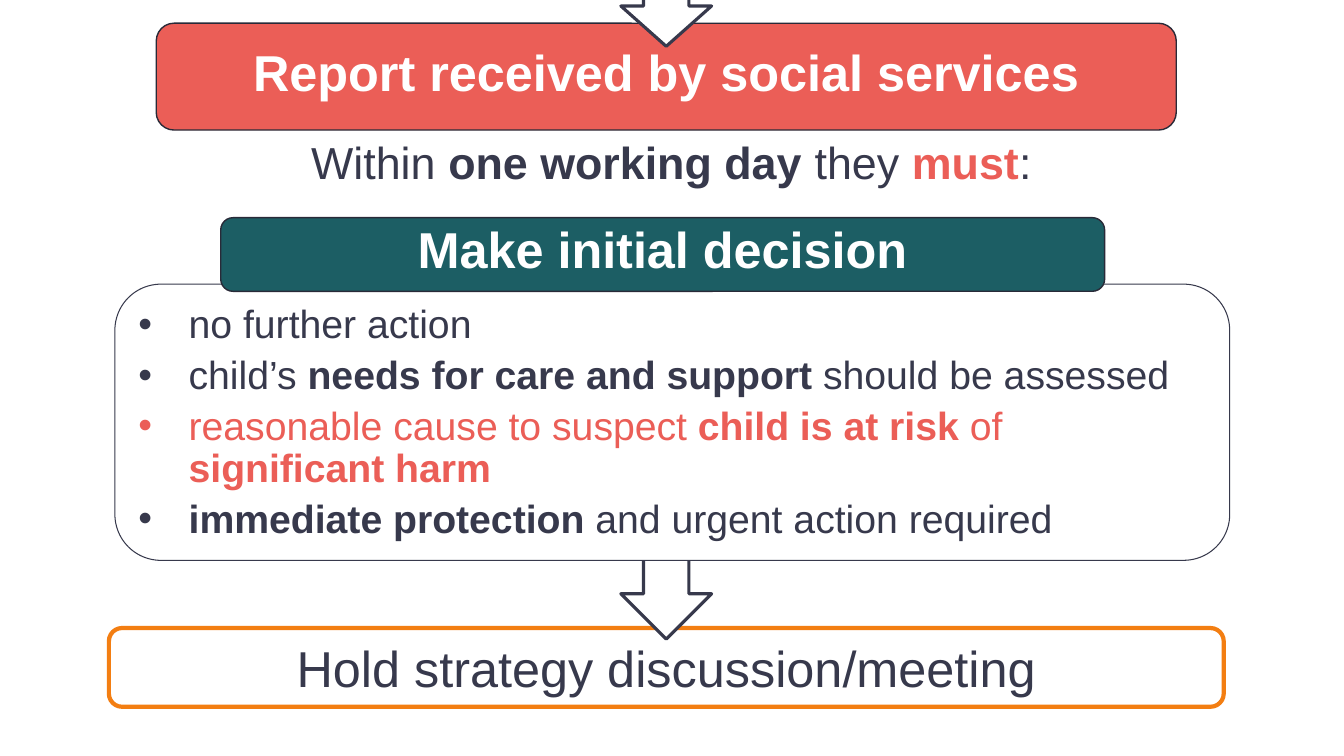
from dataclasses import dataclass
from typing import Optional

from lxml import etree
from pptx import Presentation
from pptx.dml import color
from pptx.enum import shapes, text
from pptx.oxml import ns
from pptx.util import Pt

COLORS = {
    "white": "FFFFFF",
    "ink": "37394C",
    "edge": "292A38",
    "coral": "EB5E57",
    "teal": "1C5E64",
    "orange": "F37E12",
}
FONT = "Arial"
BULLET_INDENT = 36
CENTER = text.PP_ALIGN.CENTER
TOP, MIDDLE, BOTTOM = (text.MSO_ANCHOR.TOP, text.MSO_ANCHOR.MIDDLE,
                       text.MSO_ANCHOR.BOTTOM)


@dataclass
class Run:
    text: str
    color: str = "ink"
    bold: bool = False


@dataclass
class Box:
    left: float
    top: float
    width: float
    height: float
    paragraphs: list[list[Run]]
    size: float
    fill: Optional[str] = None
    line: str = "edge"
    line_width: float = 1
    anchor: text.MSO_ANCHOR = MIDDLE
    spacing: float = 0.9
    after: float = 0
    bullets: bool = False


@dataclass
class Arrow:
    top: float
    height: float
    left: float = 443.5
    width: float = 64.8


def rgb(name: str) -> color.RGBColor:
    return color.RGBColor.from_string(COLORS[name])


def style(sp, fill: str, line: str, width: float) -> None:
    sp.shadow.inherit = False
    sp.fill.solid()
    sp.fill.fore_color.rgb = rgb(fill)
    sp.line.color.rgb = rgb(line)
    sp.line.width = Pt(width)


def add_bullet(p) -> None:
    pPr = p._p.get_or_add_pPr()
    pPr.set("marL", str(Pt(BULLET_INDENT)))
    pPr.set("indent", str(Pt(-BULLET_INDENT)))
    etree.SubElement(pPr, ns.qn("a:buFont"), typeface=FONT)
    etree.SubElement(pPr, ns.qn("a:buChar"), char="•")


def add_run(p, content: str, *, size: float, color: str, bold: bool) -> None:
    r = p.add_run()
    r.text = content
    r.font.name = FONT
    r.font.size = Pt(size)
    r.font.bold = bold
    r.font.color.rgb = rgb(color)


def draw_box(slide, box: Box) -> None:
    frame = [Pt(v) for v in (box.left, box.top, box.width, box.height)]
    if box.fill:
        sp = slide.shapes.add_shape(shapes.MSO_SHAPE.ROUNDED_RECTANGLE, *frame)
        style(sp, box.fill, box.line, box.line_width)
    else:
        sp = slide.shapes.add_textbox(*frame)
    tf = sp.text_frame
    tf.word_wrap = True
    tf.vertical_anchor = box.anchor
    for i, runs in enumerate(box.paragraphs):
        p = tf.add_paragraph() if i else tf.paragraphs[0]
        p.alignment = text.PP_ALIGN.LEFT if box.bullets else CENTER
        p.line_spacing = box.spacing
        last = i == len(box.paragraphs) - 1
        p.space_after = Pt(0 if last else box.after)
        if box.bullets:
            add_bullet(p)
        for run in runs:
            add_run(p, run.text, size=box.size, color=run.color, bold=run.bold)


def draw_arrow(slide, arrow: Arrow) -> None:
    sp = slide.shapes.add_shape(
        shapes.MSO_SHAPE.DOWN_ARROW, Pt(arrow.left), Pt(arrow.top),
        Pt(arrow.width), Pt(arrow.height))
    style(sp, "white", "ink", 2.25)


# Content, from back to front
PARTS = [
    # Report and its deadline
    Box(111.6, 16.6, 728.6, 76.3,
        [[Run("Report received by social services", "white", True)]],
        36, fill="coral", spacing=0.8),
    Arrow(-24.5, 57.6),
    Box(81.4, 97.2, 796.3, 42.5,
        [[Run("Within "), Run("one working day ", bold=True), Run("they "),
          Run("must", "coral", True), Run(":")]],
        32, anchor=TOP),
    # Strategy meeting
    Box(77.8, 448.6, 796.3, 56.2, [[Run("Hold strategy discussion/meeting")]],
        36, fill="white", line="orange", line_width=3, spacing=1),
    Arrow(380.2, 76.3),
    # Possible decisions
    Box(82.1, 203, 796.3, 197.3,
        [[Run("no further action")],
         [Run("child’s "), Run("needs for care and support ", bold=True),
          Run("should be assessed")],
         [Run("reasonable cause to suspect ", "coral"),
          Run("child is at risk ", "coral", True), Run("of ", "coral"),
          Run("significant harm", "coral", True)],
         [Run("immediate protection ", bold=True),
          Run("and urgent action required")]],
        28, fill="white", line="ink", line_width=0.75, anchor=BOTTOM,
        after=6, bullets=True),
    Box(157.7, 155.5, 631.4, 52.6,
        [[Run("Make initial decision", "white", True)]],
        36, fill="teal", spacing=0.8),
]


def main() -> None:
    prs = Presentation()
    prs.slide_width, prs.slide_height = Pt(960), Pt(540)
    slide = prs.slides.add_slide(prs.slide_layouts[6])
    for part in PARTS:
        if isinstance(part, Arrow):
            draw_arrow(slide, part)
        else:
            draw_box(slide, part)
    prs.save("out.pptx")


if __name__ == "__main__":
    main()
